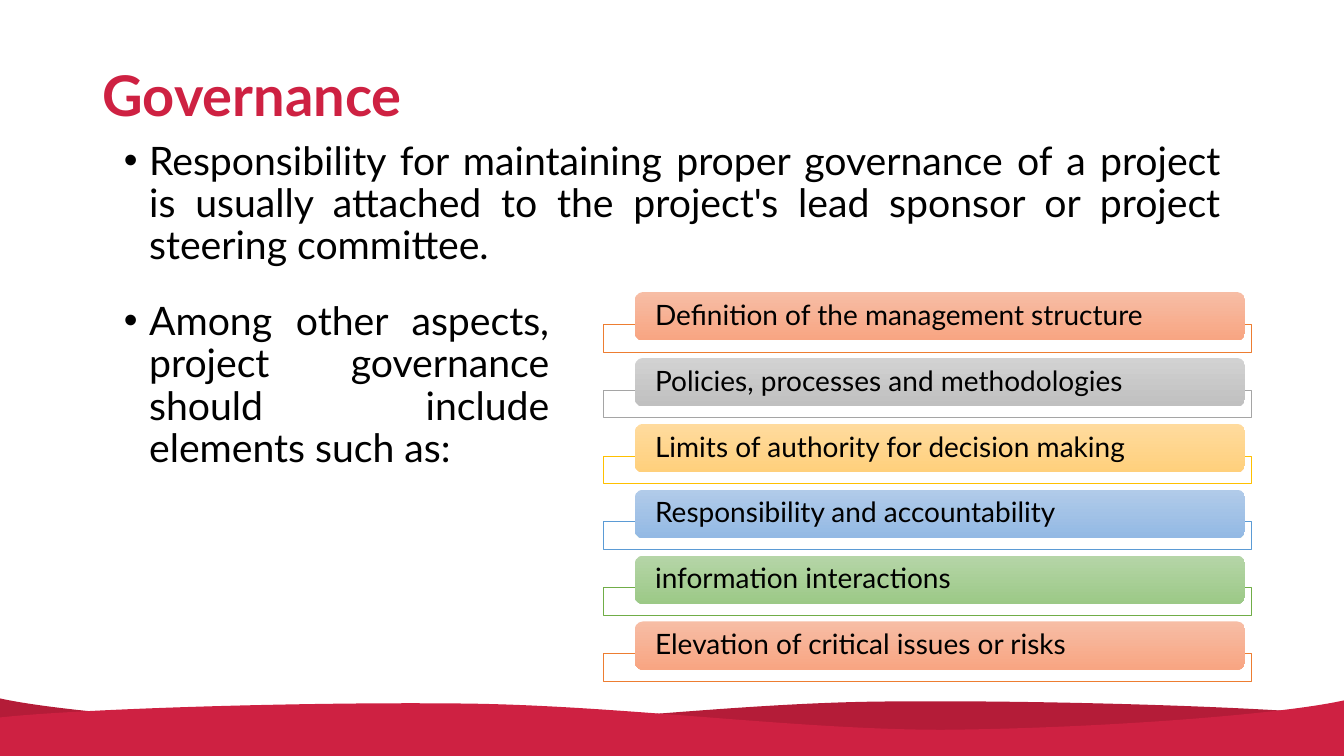
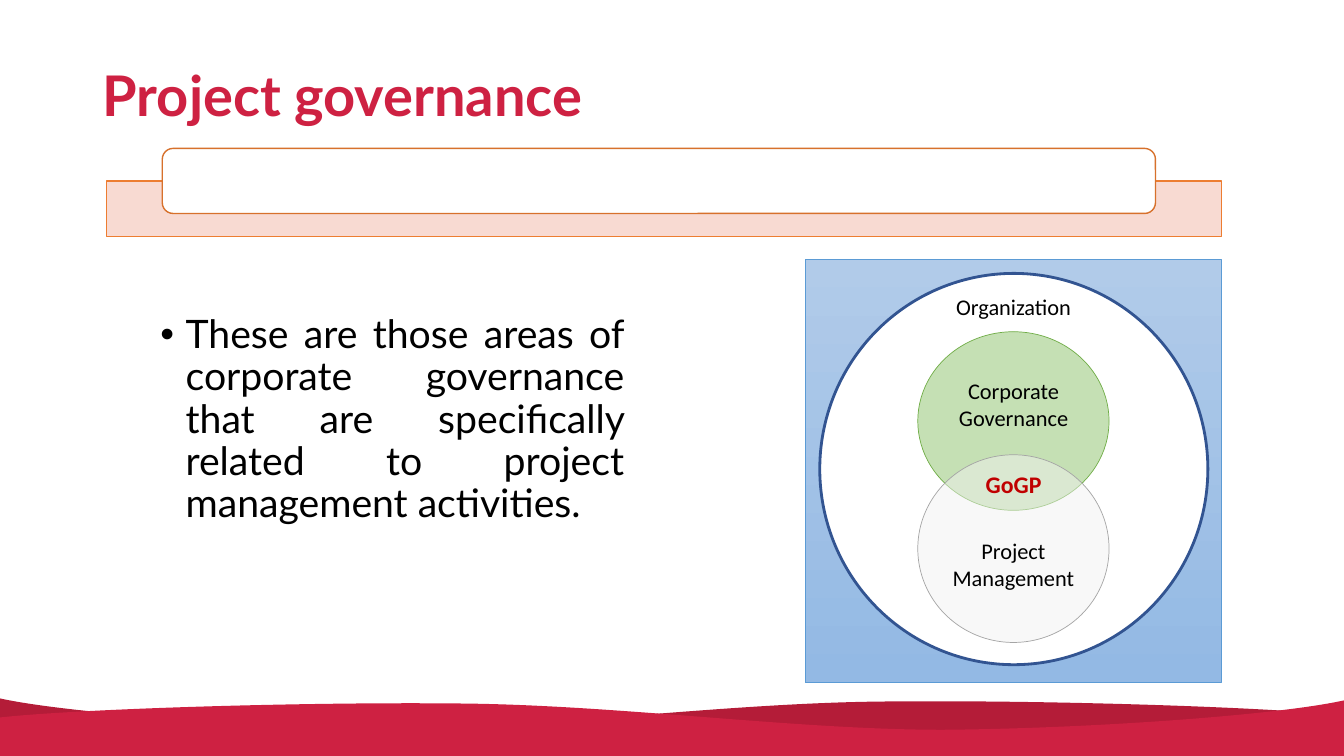
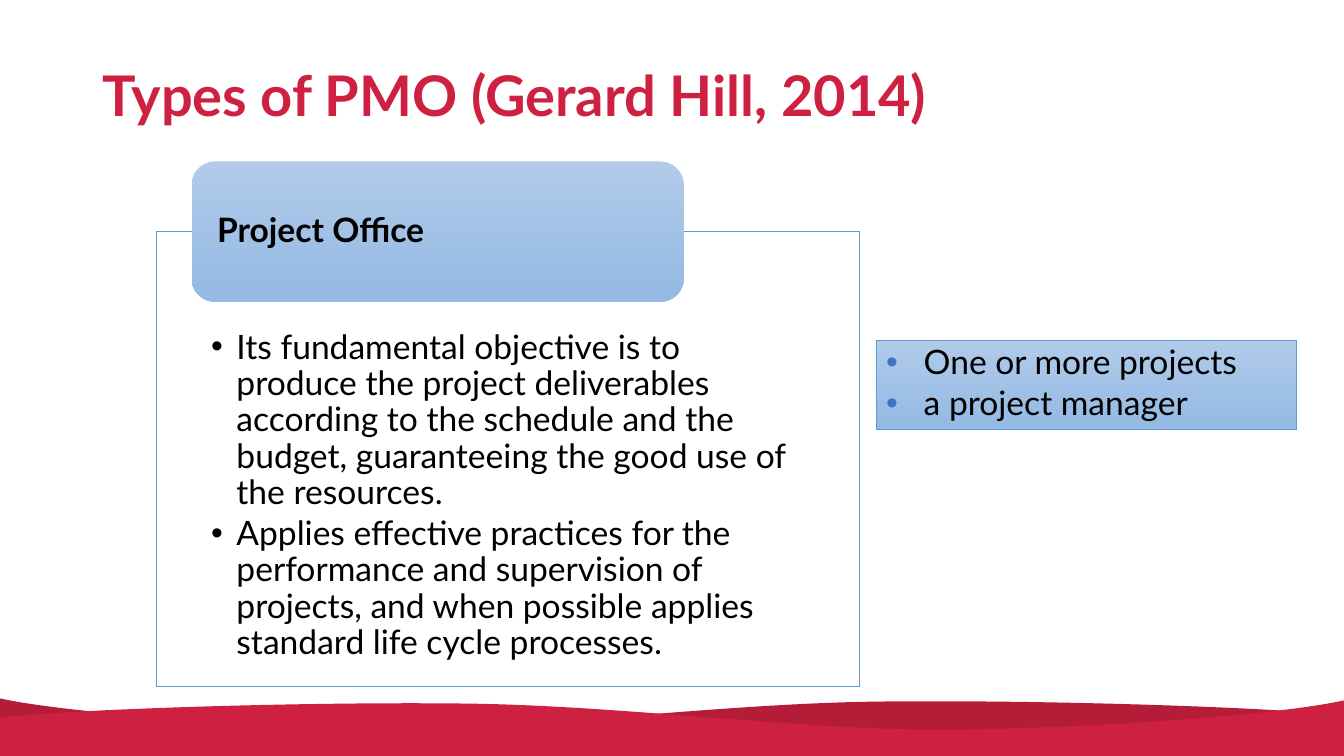
import dataclasses

import lxml.etree
import pptx
import pptx.dml.color
import pptx.enum.shapes
import pptx.enum.text
import pptx.oxml.ns
import pptx.util

Cm = pptx.util.Cm
Pt = pptx.util.Pt
qn = pptx.oxml.ns.qn
SHAPES = pptx.enum.shapes.MSO_SHAPE
ANCHOR = pptx.enum.text.MSO_ANCHOR
ALIGN = pptx.enum.text.PP_ALIGN


@dataclasses.dataclass(frozen=True)
class Theme:
    width: float = 33.87
    height: float = 19.05
    font: str = "Lato"
    diagram_font: str = "Calibri"
    title_size: int = 40
    body_size: int = 28
    panel_size: int = 24
    label_size: int = 20
    diagram_size: int = 16
    overlap_size: int = 17
    red: str = "CE2142"
    dark_red: str = "B41C38"
    black: str = "000000"
    white: str = "FFFFFF"
    orange: str = "ED7D31"
    dark_orange: str = "D7712C"
    peach: str = "F8D7CE"
    gray: str = "A5A5A5"
    pale_gray: str = "F2F2F2"
    gold: str = "FFC000"
    blue: str = "5B9BD5"
    navy: str = "325491"
    bullet_blue: str = "4472C4"
    green: str = "70AD47"
    pale_green: str = "C5E0B4"
    overlap_red: str = "C00000"
    orange_blend: tuple = ("F7BDA5", "F8A582")
    gray_blend: tuple = ("D2D2D2", "C0C0C0")
    gold_blend: tuple = ("FFDB9E", "FFD07C")
    blue_blend: tuple = ("B1CBE9", "93B9E4")
    green_blend: tuple = ("B5D5A7", "9CC987")


THEME = Theme()
INSETS = (0.25, 0.13, 0.25, 0.13)
WAVE_CREST = (
    (33.87, 18.03),
    (31.9, 17.81), (26.06, 17.63), (22.1, 17.68),
    (18.16, 17.73), (13.79, 18.34), (10.11, 18.34),
    (6.43, 18.31), (1.73, 17.98), (0, 17.6),
)


def rgb(color):
    return pptx.dml.color.RGBColor.from_string(color)


def paint(shape, fill, line=None, line_width=0.5, opacity=100):
    shape.shadow.inherit = False
    if isinstance(fill, tuple):
        shape.fill.gradient()
        shape.fill.gradient_angle = 270
        for stop, color in zip(shape.fill.gradient_stops, fill):
            stop.color.rgb = rgb(color)
    else:
        shape.fill.solid()
        shape.fill.fore_color.rgb = rgb(fill)
    if opacity < 100:
        color_element = next(shape._element.spPr.iter(qn("a:srgbClr")))
        lxml.etree.SubElement(color_element, qn("a:alpha"), val=str(opacity * 1000))
    if line:
        shape.line.color.rgb = rgb(line)
        shape.line.width = Pt(line_width)
    else:
        shape.line.fill.background()


def add_block(slide, preset, box, fill, line=None, line_width=0.5, opacity=100):
    block = slide.shapes.add_shape(preset, *map(Cm, box))
    paint(block, fill, line, line_width, opacity)
    return block


def add_bullet(paragraph, indent, color):
    properties = paragraph._p.get_or_add_pPr()
    properties.set("marL", str(Cm(indent)))
    properties.set("indent", str(-Cm(indent)))
    if color:
        bullet_color = lxml.etree.SubElement(properties, qn("a:buClr"))
        lxml.etree.SubElement(bullet_color, qn("a:srgbClr"), val=color)
    lxml.etree.SubElement(properties, qn("a:buFont"), typeface="Arial")
    lxml.etree.SubElement(properties, qn("a:buChar"), char="•")


def write(shape, lines, size, color=THEME.black, font=THEME.font, bold=False,
          align=ALIGN.LEFT, anchor=ANCHOR.TOP, insets=INSETS, spacing=0.9,
          before=0, after=0, indent=0, bullet_color=None):
    frame = shape.text_frame
    frame.word_wrap = True
    frame.vertical_anchor = anchor
    frame.margin_left, frame.margin_top, frame.margin_right, frame.margin_bottom = map(Cm, insets)
    frame.text = "\n".join(lines)
    for paragraph in frame.paragraphs:
        if indent:
            add_bullet(paragraph, indent, bullet_color)
        paragraph.alignment = align
        paragraph.line_spacing = spacing
        paragraph.space_before = Pt(before)
        paragraph.space_after = Pt(after)
        paragraph.font.name = font
        paragraph.font.size = Pt(size)
        paragraph.font.bold = bold
        paragraph.font.color.rgb = rgb(color)


def add_text(slide, box, lines, size, **style):
    write(slide.shapes.add_textbox(*map(Cm, box)), lines, size, **style)


def add_body(slide, box, sentence):
    add_text(slide, box, [sentence], THEME.body_size, align=ALIGN.JUSTIFY, before=10, indent=0.64)


def add_diagram_label(slide, box, label, size=THEME.diagram_size, **style):
    add_text(slide, box, [label], size, font=THEME.diagram_font, align=ALIGN.CENTER,
             spacing=1.0, **style)


def add_wave(slide, crest, color):
    end_x, start_x = crest[-1][0], crest[0][0]
    outline = [*crest, (end_x, THEME.height), (start_x, THEME.height)]
    corners = [(Cm(x), Cm(y)) for x, y in outline]
    builder = slide.shapes.build_freeform(*corners[0])
    builder.add_line_segments(corners[1:], close=True)
    wave = builder.convert_to_shape()
    segments = list(wave._element.spPr.iter(qn("a:lnTo")))[:len(crest) - 1]
    for first in range(0, len(segments), 3):
        curve = lxml.etree.Element(qn("a:cubicBezTo"))
        segments[first].addprevious(curve)
        for segment in segments[first:first + 3]:
            curve.append(segment[0])
            segment.getparent().remove(segment)
    paint(wave, color)


def add_slide(deck, title):
    slide = deck.slides.add_slide(deck.slide_layouts[6])
    add_wave(slide, WAVE_CREST, THEME.dark_red)
    add_wave(slide, [(THEME.width - x, y + 0.05) for x, y in WAVE_CREST], THEME.red)
    add_text(slide, (2.34, 0.64, 29.21, 3.68), [title], THEME.title_size,
             color=THEME.red, bold=True, anchor=ANCHOR.MIDDLE)
    return slide


def build_governance(deck):
    slide = add_slide(deck, "Governance")
    add_body(slide, (2.87, 3.43, 28.14, 3.68),
             "Responsibility for maintaining proper governance of a project is usually "
             "attached to the project's lead sponsor or project steering committee.")
    elements = (
        ("Definition of the management structure", THEME.orange, THEME.orange_blend),
        ("Policies, processes and methodologies", THEME.gray, THEME.gray_blend),
        ("Limits of authority for decision making", THEME.gold, THEME.gold_blend),
        ("Responsibility and accountability", THEME.blue, THEME.blue_blend),
        ("information interactions", THEME.green, THEME.green_blend),
        ("Elevation of critical issues or risks", THEME.orange, THEME.orange_blend),
    )
    for row, (element, outline, blend) in enumerate(elements):
        top = 7.36 + row * 1.66
        add_block(slide, SHAPES.RECTANGLE, (15.2, top + 0.81, 16.33, 0.7),
                  THEME.white, outline, opacity=90)
        bar = add_block(slide, SHAPES.ROUNDED_RECTANGLE, (16, top, 15.38, 1.22), blend)
        write(bar, [element], THEME.label_size, anchor=ANCHOR.MIDDLE, insets=(0.45, 0, 0.45, 0))
    add_body(slide, (2.87, 7.47, 11.22, 6.6),
             "Among other aspects, project governance should include elements such as:")


def build_project_governance(deck):
    slide = add_slide(deck, "Project governance")
    add_body(slide, (3.79, 7.8, 12.19, 7.11),
             "These are those areas of corporate governance that are specifically "
             "related to project management activities.")
    add_block(slide, SHAPES.RECTANGLE, (2.69, 4.56, 28.09, 1.4),
              THEME.peach, THEME.orange, 1, opacity=90)
    add_block(slide, SHAPES.ROUNDED_RECTANGLE, (4.09, 3.74, 25.03, 1.64),
              THEME.white, THEME.dark_orange, 1)
    add_block(slide, SHAPES.RECTANGLE, (20.3, 6.53, 10.47, 10.67), THEME.blue_blend, THEME.blue)
    add_block(slide, SHAPES.OVAL, (20.66, 6.89, 9.78, 9.86), THEME.white, THEME.navy, 2)
    add_block(slide, SHAPES.OVAL, (23.13, 8.36, 4.82, 4.5), THEME.pale_green, THEME.green)
    add_block(slide, SHAPES.OVAL, (23.13, 11.46, 4.82, 4.73),
              THEME.pale_gray, THEME.gray, opacity=48)
    add_diagram_label(slide, (23.36, 7.26, 4.37, 0.94), "Organization")
    add_diagram_label(slide, (23.55, 9.37, 3.99, 1.63), "Corporate Governance")
    add_diagram_label(slide, (23.75, 13.4, 3.58, 1.63), "Project Management")
    add_diagram_label(slide, (24.26, 11.71, 2.57, 0.99), "GoGP", THEME.overlap_size,
                      color=THEME.overlap_red, bold=True)


def build_pmo_types(deck):
    slide = add_slide(deck, "Types of PMO (Gerard Hill, 2014)")
    purpose = add_block(slide, SHAPES.RECTANGLE, (3.94, 5.82, 17.73, 11.48),
                        THEME.white, THEME.blue, opacity=90)
    write(purpose,
          ["Its fundamental objective is to produce the project deliverables according to "
           "the schedule and the budget, guaranteeing the good use of the resources.",
           "Applies effective practices for the performance and supervision of projects, "
           "and when possible applies standard life cycle processes."],
          THEME.panel_size, insets=(1.38, 2.5, 1.37, 0.48), after=3.6, indent=0.64)
    office = add_block(slide, SHAPES.ROUNDED_RECTANGLE, (4.83, 4.07, 12.4, 3.53),
                       THEME.blue_blend)
    write(office, ["Project Office"], THEME.panel_size, bold=True,
          anchor=ANCHOR.MIDDLE, insets=(0.47, 0, 0.47, 0))
    scope = add_block(slide, SHAPES.RECTANGLE, (22.08, 8.58, 10.6, 2.25),
                      THEME.blue_blend, THEME.blue)
    write(scope, ["One or more projects", "a project manager"], THEME.panel_size,
          after=3.6, indent=0.95, bullet_color=THEME.bullet_blue)


def main():
    deck = pptx.Presentation()
    deck.slide_width = Cm(THEME.width)
    deck.slide_height = Cm(THEME.height)
    build_governance(deck)
    build_project_governance(deck)
    build_pmo_types(deck)
    deck.save("out.pptx")


if __name__ == "__main__":
    main()
